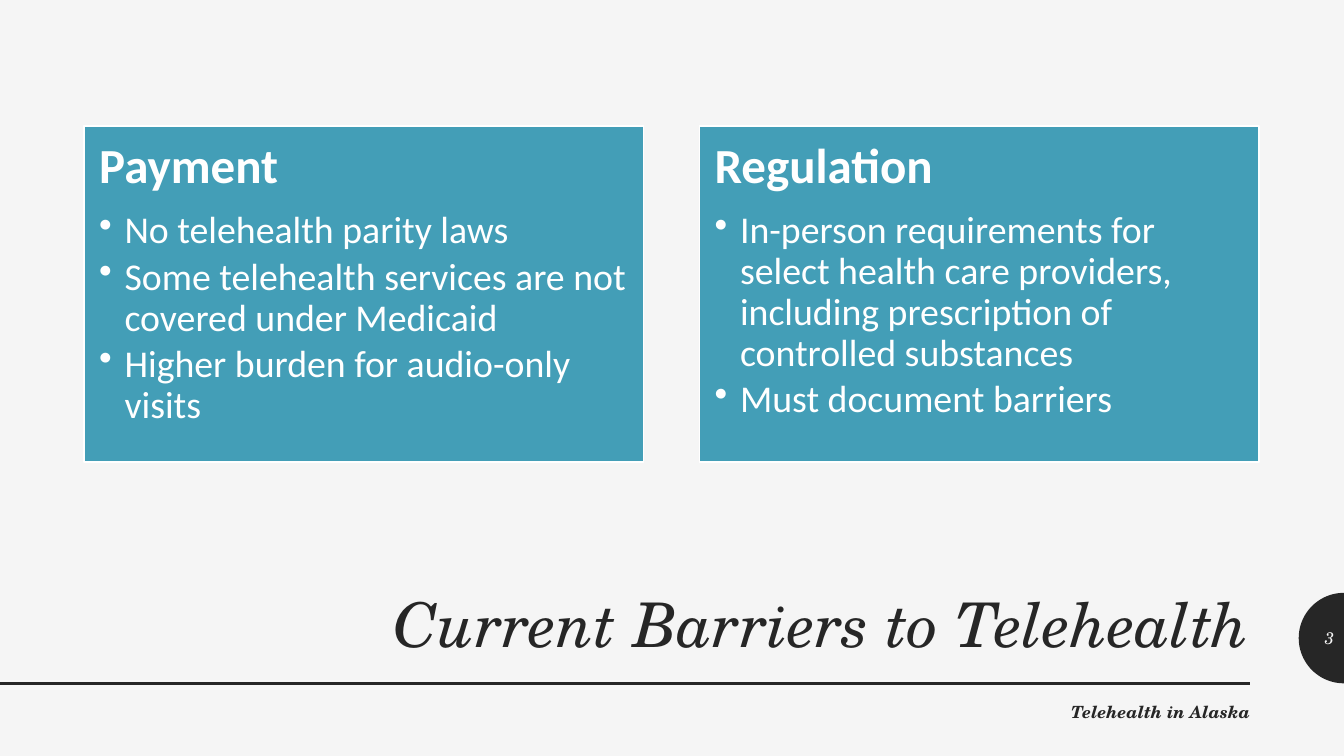
import math
from dataclasses import dataclass

import pptx
import pptx.util
import pptx.dml.color
import pptx.enum.shapes
import pptx.enum.text
import pptx.oxml.ns
from lxml import etree

# Content
TITLE = "Current Barriers to Telehealth"
FOOTER = "Telehealth in Alaska"
PAGE = "3"
BARRIERS = [
    ("Payment", [
        "No telehealth parity laws",
        "Some telehealth services are not covered under Medicaid",
        "Higher burden for audio-only visits",
    ]),
    ("Regulation", [
        "In-person requirements for select health care providers, "
        "including prescription of controlled substances",
        "Must document barriers",
    ]),
]


@dataclass(frozen=True)
class Theme:
    paper: str = "F5F5F5"
    ink: str = "262626"
    panel: str = "439EB7"
    white: str = "FFFFFF"
    serif: str = "TeX Gyre Schola"
    sans: str = "Calibri"
    title: int = 44
    heading: int = 35
    bullet: int = 27
    small: int = 12


THEME = Theme()
Cm, Pt = pptx.util.Cm, pptx.util.Pt
ALIGN, ANCHOR = pptx.enum.text.PP_ALIGN, pptx.enum.text.MSO_ANCHOR
qn = pptx.oxml.ns.qn

# Layout, in centimetres
SLIDE_W, SLIDE_H = 33.87, 19.05
PANEL_LEFT, PANEL_TOP, PANEL_W, PANEL_H = 2.12, 3.18, 14.1, 8.46
PANEL_STEP = PANEL_W * 1.1
PANEL_INSET = 0.38
BULLET_INDENT = 0.64
RULE_Y, RULE_END = 17.22, 31.5
TAB_RADIUS = 1.14
TEXT_RIGHT = 31.75


def rgb(value):
    return pptx.dml.color.RGBColor.from_string(value)


def write(frame, text, *, size, color, font=THEME.serif, bold=False,
          italic=False, align=ALIGN.LEFT, line=1.0, after=0, bullet=False):
    """Put text into the frame's empty first paragraph, or into a new one."""
    paragraph = frame.paragraphs[0]
    if paragraph.runs:
        paragraph = frame.add_paragraph()
    paragraph.alignment = align
    paragraph.line_spacing = line
    paragraph.space_before, paragraph.space_after = Pt(0), Pt(after)
    if bullet:
        props = paragraph._p.get_or_add_pPr()
        props.set("marL", str(Cm(BULLET_INDENT)))
        props.set("indent", str(-Cm(BULLET_INDENT)))
        etree.SubElement(props, qn("a:buChar")).set("char", "•")
    run = paragraph.add_run()
    run.text = text
    run.font.name, run.font.size = font, Pt(size)
    run.font.bold, run.font.italic = bold, italic
    run.font.color.rgb = rgb(color)


def text_area(left, top, width, height, anchor):
    frame = slide.shapes.add_textbox(
        Cm(left), Cm(top), Cm(width), Cm(height)).text_frame
    frame.word_wrap = True
    frame.vertical_anchor = anchor
    return frame


deck = pptx.Presentation()
deck.slide_width, deck.slide_height = Cm(SLIDE_W), Cm(SLIDE_H)
slide = deck.slides.add_slide(deck.slide_layouts[6])
slide.background.fill.solid()
slide.background.fill.fore_color.rgb = rgb(THEME.paper)

# Title and the rule under it
write(text_area(2.08, 14.53, TEXT_RIGHT - 2.08, 2.59, ANCHOR.MIDDLE), TITLE,
      size=THEME.title, color=THEME.ink, italic=True, align=ALIGN.RIGHT, line=0.9)
rule = slide.shapes.add_connector(
    pptx.enum.shapes.MSO_CONNECTOR.STRAIGHT,
    Cm(0), Cm(RULE_Y), Cm(RULE_END), Cm(RULE_Y))
rule.line.color.rgb, rule.line.width = rgb(THEME.ink), Pt(2)
etree.SubElement(rule._element.spPr, qn("a:effectLst"))

# Half-round page tab standing on the rule at the right edge
tab_middle = RULE_Y - TAB_RADIUS
ARC_STEPS = 48
arc = [(Cm(SLIDE_W - TAB_RADIUS * math.sin(math.pi * i / ARC_STEPS)),
        Cm(tab_middle + TAB_RADIUS * math.cos(math.pi * i / ARC_STEPS)))
       for i in range(ARC_STEPS + 1)]
outline = slide.shapes.build_freeform(*arc[0])
outline.add_line_segments(arc[1:], close=True)
page_tab = outline.convert_to_shape()
page_tab.shadow.inherit = False
page_tab.fill.solid()
page_tab.fill.fore_color.rgb = rgb(THEME.ink)
page_tab.line.fill.background()
write(text_area(SLIDE_W - TAB_RADIUS, tab_middle - 0.51, TAB_RADIUS, 1.02,
                ANCHOR.MIDDLE), PAGE,
      size=THEME.small, color=THEME.paper, italic=True, align=ALIGN.RIGHT, after=6)

# Footer
write(text_area(12.22, 17.55, TEXT_RIGHT - 12.22, 1.02, ANCHOR.TOP), FOOTER,
      size=THEME.small, color=THEME.ink, bold=True, italic=True,
      align=ALIGN.RIGHT, after=6)

# Barrier panels
for column, (heading, points) in enumerate(BARRIERS):
    panel = slide.shapes.add_shape(
        pptx.enum.shapes.MSO_SHAPE.RECTANGLE,
        Cm(PANEL_LEFT + column * PANEL_STEP), Cm(PANEL_TOP),
        Cm(PANEL_W), Cm(PANEL_H))
    panel.shadow.inherit = False
    panel.fill.solid()
    panel.fill.fore_color.rgb = rgb(THEME.panel)
    panel.line.color.rgb, panel.line.width = rgb(THEME.white), Pt(1)
    body = panel.text_frame
    body.word_wrap = True
    body.vertical_anchor = ANCHOR.TOP
    body.margin_left = body.margin_right = Cm(PANEL_INSET)
    body.margin_top = body.margin_bottom = Cm(PANEL_INSET)
    write(body, heading, size=THEME.heading, color=THEME.white,
          font=THEME.sans, bold=True, line=0.9, after=12)
    for point in points:
        write(body, point, size=THEME.bullet, color=THEME.white,
              font=THEME.sans, line=0.9, after=4, bullet=True)

deck.save("out.pptx")
